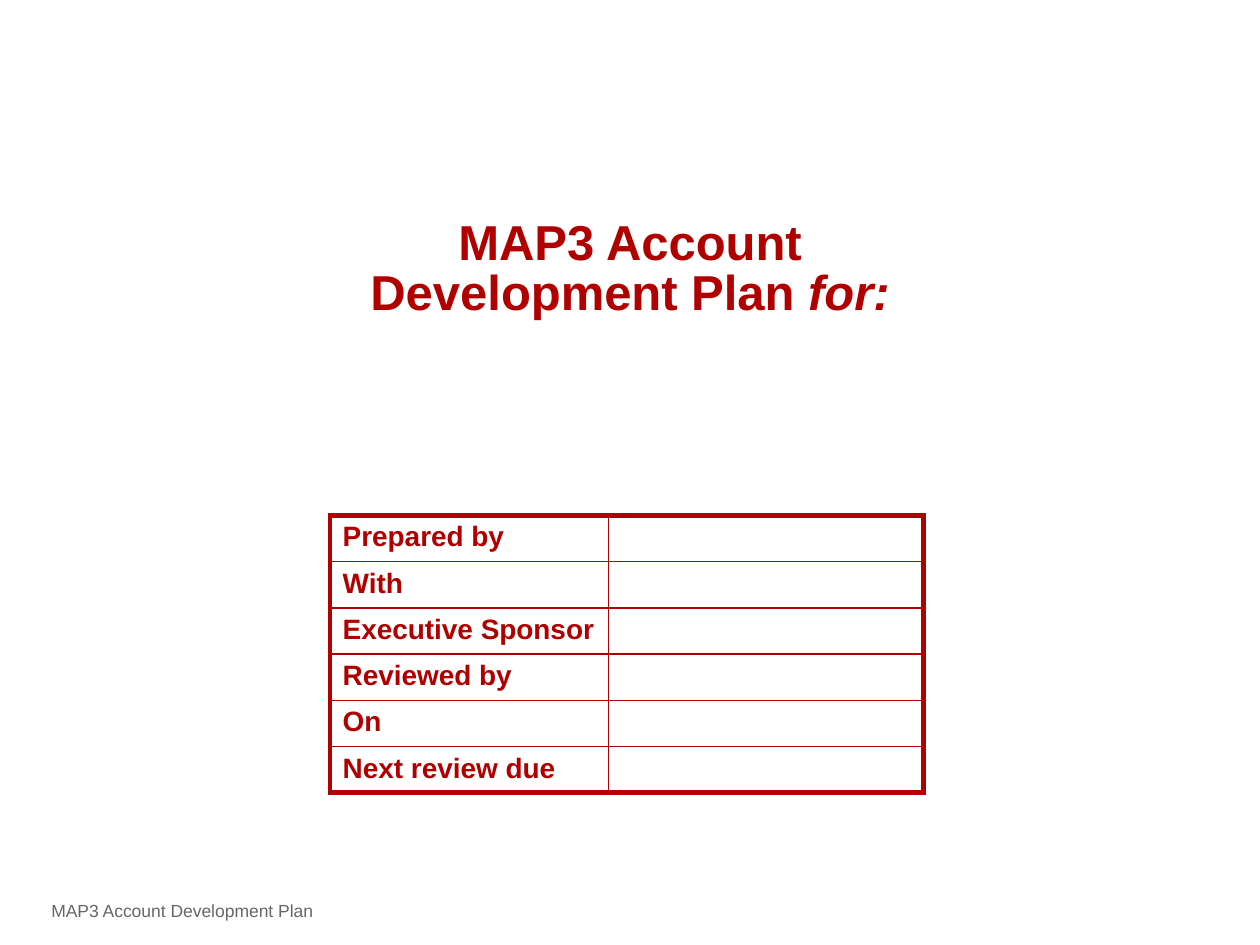
from lxml import etree
from pptx import Presentation
from pptx.dml.color import RGBColor
from pptx.enum.text import MSO_ANCHOR, PP_ALIGN
from pptx.oxml.ns import qn
from pptx.util import Inches, Pt

MIDDLE = MSO_ANCHOR.MIDDLE
CENTER = PP_ALIGN.CENTER
RED = RGBColor(0xB0, 0x00, 0x00)
GRAY = RGBColor(0x67, 0x67, 0x67)
WHITE = RGBColor(0xFF, 0xFF, 0xFF)
THICK, THIN = Pt(3), Pt(1)

TITLE_FONT = {"name": "Arial", "size": Pt(28), "bold": True}
LABEL_FONT = {"name": "Arial", "size": Pt(16), "bold": True}
FOOTER_FONT = {"name": "Arial", "size": Pt(10)}


def add_run(paragraph, text, color, font_format):
    run = paragraph.add_run()
    run.text = text
    run.font.color.rgb = color
    for name, value in font_format.items():
        setattr(run.font, name, value)


def set_borders(cell, widths):
    properties = cell._tc.get_or_add_tcPr()
    for index, (side, width) in enumerate(widths.items()):
        line = etree.Element(qn(f"a:{side}"), w=str(width))
        fill = etree.SubElement(line, qn("a:solidFill"))
        etree.SubElement(fill, qn("a:srgbClr"), val=str(RED))
        properties.insert(index, line)


presentation = Presentation()
presentation.slide_width = Inches(10)
presentation.slide_height = Inches(7.5)
slide = presentation.slides.add_slide(presentation.slide_layouts[6])

# Footer and title
text_blocks = [
    ((0, 6.95, 2.89, 0.55), 1, FOOTER_FONT, GRAY,
     [("MAP3 Account Development Plan", {})]),
    ((2.64, 1.52, 4.72, 1.25), 0.85, TITLE_FONT, RED,
     [("MAP3 Account Development Plan ", {}), ("for:", {"italic": True})]),
]
for position, spacing, font_format, color, pieces in text_blocks:
    box = slide.shapes.add_textbox(*[Inches(value) for value in position])
    frame = box.text_frame
    frame.word_wrap = True
    frame.vertical_anchor = MIDDLE
    paragraph = frame.paragraphs[0]
    paragraph.alignment = CENTER
    paragraph.line_spacing = spacing
    for text, extra in pieces:
        add_run(paragraph, text, color, {**font_format, **extra})

# Sign-off table: labels on the left, empty cells to fill in on the right
labels = ["Prepared by", "With", "Executive Sponsor",
          "Reviewed by", "On", "Next review due"]
table = slide.shapes.add_table(
    len(labels), 2, Inches(2.62), Inches(4.09), Inches(4.71), Inches(2.2)).table
table.first_row = False
table.horz_banding = False
table.columns[0].width = Inches(2.21)
table.columns[1].width = Inches(2.5)

last_row = len(labels) - 1
for row, label in enumerate(labels):
    table.rows[row].height = Inches(2.2 / len(labels))
    for column in range(2):
        cell = table.cell(row, column)
        cell.fill.solid()
        cell.fill.fore_color.rgb = WHITE
        set_borders(cell, {
            "lnL": THICK if column == 0 else THIN,
            "lnR": THICK if column == 1 else THIN,
            "lnT": THICK if row == 0 else THIN,
            "lnB": THICK if row == last_row else THIN,
        })
        paragraph = cell.text_frame.paragraphs[0]
        if column == 0:
            add_run(paragraph, label, RED, LABEL_FONT)
        else:
            # Keeps the empty cell from growing its row
            etree.SubElement(paragraph._p, qn("a:endParaRPr"), sz="1600")

presentation.save("out.pptx")
